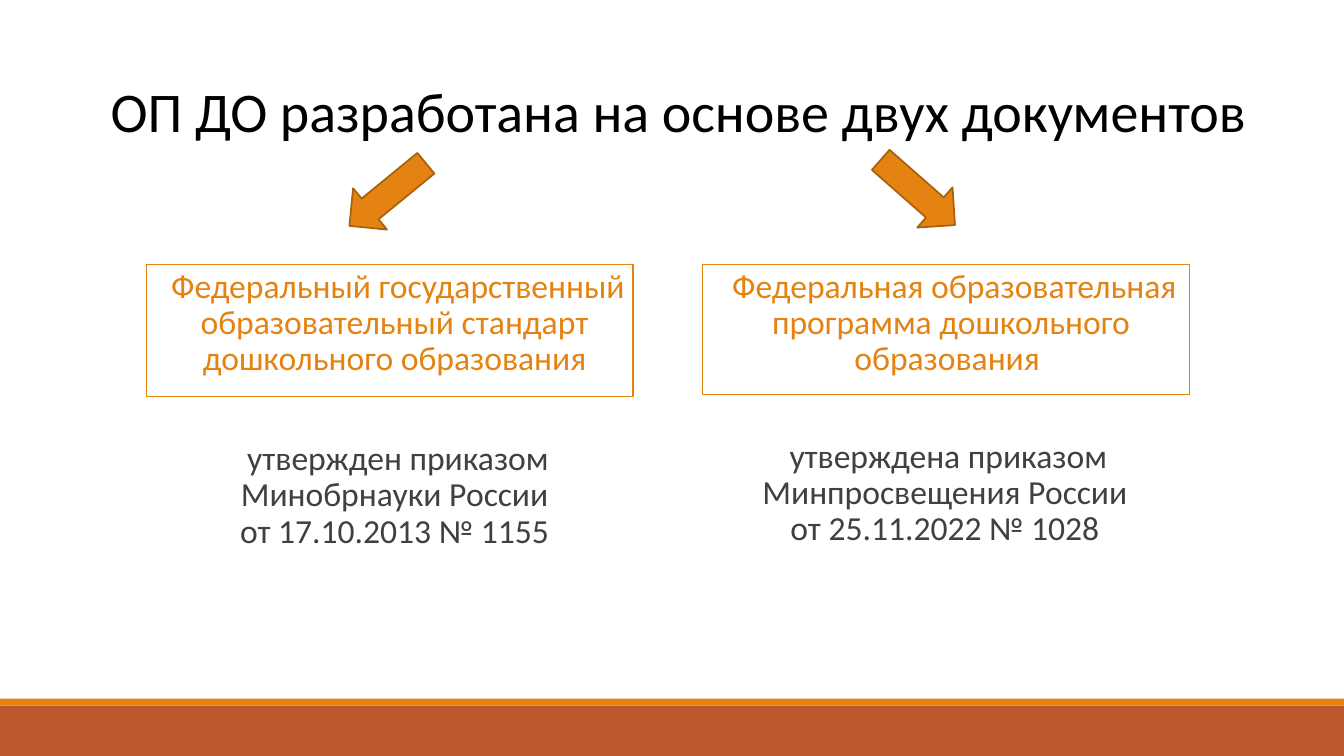
import pptx
import pptx.dml.color
import pptx.enum.shapes
import pptx.enum.text
import pptx.oxml.ns
import pptx.util
from lxml import etree

Pt = pptx.util.Pt
rgb = pptx.dml.color.RGBColor.from_string

THEME = {
    "font": "Calibri",
    "title_size": Pt(40),
    "body_size": Pt(24),
    "title": rgb("000000"),
    "body": rgb("404040"),
    "accent": rgb("E48312"),
    "arrow_edge": rgb("A9610D"),
    "footer": rgb("BD582C"),
}

deck = pptx.Presentation()
deck.slide_width, deck.slide_height = Pt(960), Pt(540)
slide = deck.slides.add_slide(deck.slide_layouts[6])


def add_filled(preset, left, top, width, height, fill):
    shape = slide.shapes.add_shape(preset, Pt(left), Pt(top), Pt(width), Pt(height))
    shape.shadow.inherit = False
    shape.fill.solid()
    shape.fill.fore_color.rgb = fill
    shape.line.fill.background()
    return shape


def add_text(text, left, top, width, height, size, color):
    box = slide.shapes.add_textbox(Pt(left), Pt(top), Pt(width), Pt(height))
    box.text_frame.word_wrap = True
    paragraph = box.text_frame.paragraphs[0]
    paragraph.text = text
    paragraph.font.name = THEME["font"]
    paragraph.font.size = size
    paragraph.font.color.rgb = color
    return box


# Footer bands
RECTANGLE = pptx.enum.shapes.MSO_SHAPE.RECTANGLE
add_filled(RECTANGLE, 0, 504, 960, 36, THEME["footer"])
add_filled(RECTANGLE, 0, 499, 960, 5, THEME["accent"])

# Title
add_text("ОП ДО разработана на основе двух документов",
         72, 51.1, 837.4, 55.4, THEME["title_size"], THEME["title"])

# Two documents: framed name above, approving order below (left, top, width, height)
documents = [
    ("Федеральный государственный образовательный стандарт дошкольного образования",
     (104.4, 188.6, 347.8, 94.3),
     "утвержден приказом Минобрнауки России\vот 17.10.2013 № 1155",
     (104.4, 311.8, 347.8, 103.7)),
    ("Федеральная образовательная программа дошкольного образования ",
     (501.8, 188.6, 347.8, 92.9),
     "утверждена приказом Минпросвещения России\vот 25.11.2022 № 1028",
     (501.1, 310.3, 340.6, 103.7)),
]
for name, name_area, order, order_area in documents:
    name_box = add_text(name, *name_area, THEME["body_size"], THEME["accent"])
    name_box.line.color.rgb = THEME["accent"]
    name_box.line.width = Pt(0.75)
    order_box = add_text(order, *order_area, THEME["body_size"], THEME["body"])

    for box in (name_box, order_box):
        box.text_frame.margin_left = box.text_frame.margin_right = 0
        paragraph = box.text_frame.paragraphs[0]
        paragraph.alignment = pptx.enum.text.PP_ALIGN.CENTER
        paragraph.line_spacing = 0.9
        paragraph.space_before, paragraph.space_after = Pt(12), Pt(2)
        # Hanging indent with a blank bullet
        properties = paragraph.font._element.getparent()
        properties.set("marL", str(Pt(7.2)))
        properties.set("indent", str(-Pt(7.2)))
        bullet = etree.Element(pptx.oxml.ns.qn("a:buChar"), char=" ")
        paragraph.font._element.addprevious(bullet)

# Arrows from the title to the documents
for left, top, rotation in ((257.8, 103.7, 50.7), (636.5, 102.2, 311.3)):
    arrow = add_filled(pptx.enum.shapes.MSO_SHAPE.DOWN_ARROW,
                       left, top, 38.2, 70.6, THEME["accent"])
    arrow.rotation = rotation
    arrow.line.color.rgb = THEME["arrow_edge"]
    arrow.line.width = Pt(1.25)

deck.save("out.pptx")
